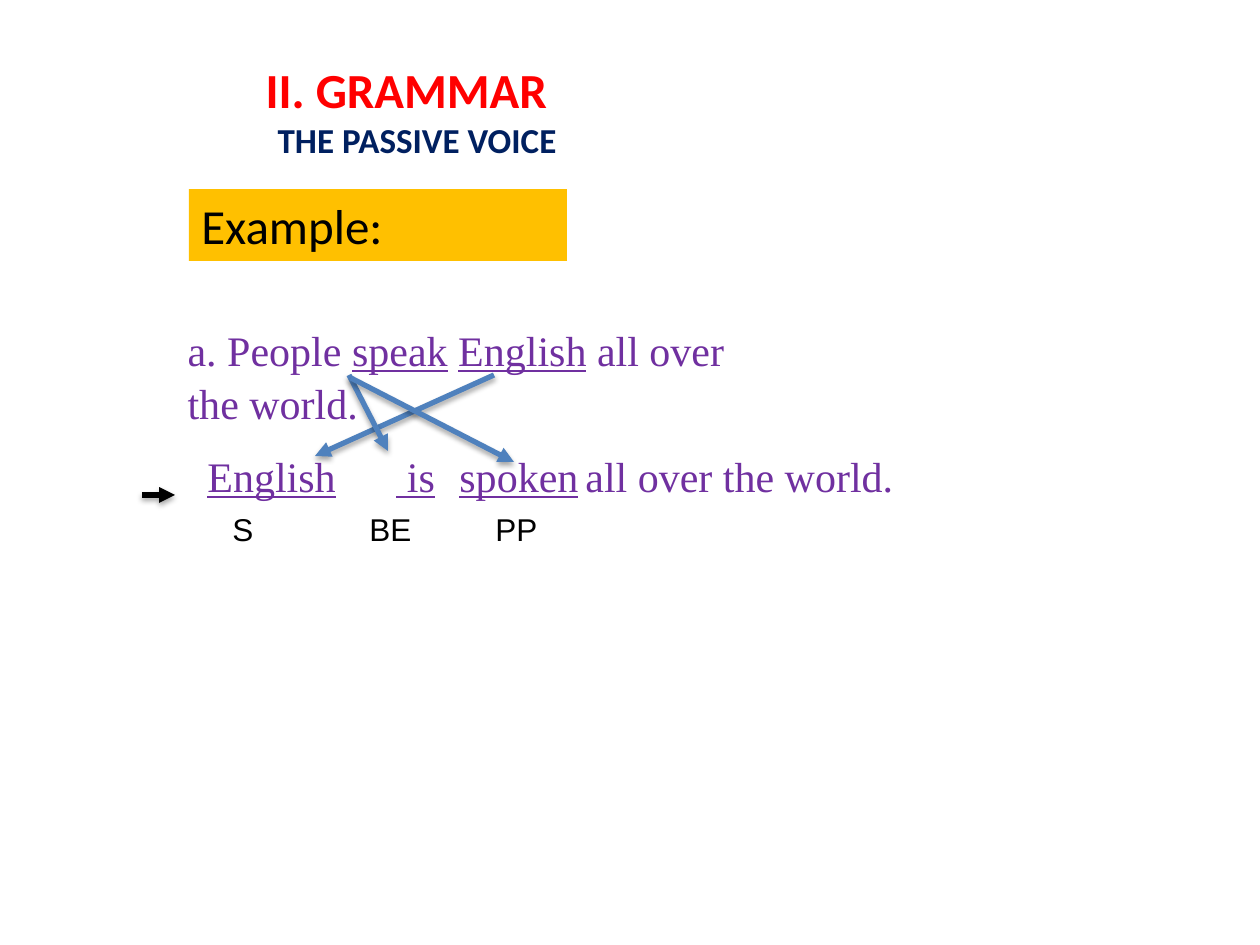
from typing import NamedTuple

from lxml.etree import SubElement
from pptx import Presentation
from pptx.dml.color import RGBColor
from pptx.enum.shapes import MSO_CONNECTOR as Connector, MSO_SHAPE as Shape
from pptx.enum.text import MSO_ANCHOR as Anchor, MSO_AUTO_SIZE as AutoSize, PP_ALIGN as Align
from pptx.oxml.ns import qn
from pptx.util import Emu, Pt

EMU_PER_PX = 914400 / 126
COLORS = {
    "heading": "FF0000",
    "topic": "002060",
    "sentence": "7030A0",
    "banner": "FFC000",
    "swap": "4F81BD",
    "black": "000000",
}


class Run(NamedTuple):
    text: str
    underline: bool = False


class Box(NamedTuple):
    left: int
    top: int
    width: int
    height: int


class Arrow(NamedTuple):
    start: tuple[int, int]
    end: tuple[int, int]
    color: str


class Label(NamedTuple):
    text: str
    box: Box


ACTIVE = [Run("a. People "), Run("speak", True), Run(" "), Run("English", True),
          Run(" all over the world.")]
PASSIVE = [Run("English", True), Run("\t"), Run(" is", True), Run("\t"),
           Run("spoken", True), Run("\tall over the world.")]
LABELS = [
    Label("S", Box(220, 504, 44, 50)),
    Label("BE", Box(357, 504, 69, 50)),
    Label("PP", Box(483, 504, 69, 50)),
]
ARROWS = [
    Arrow((494, 375), (315, 456), "swap"),
    Arrow((349, 375), (388, 451), "swap"),
    Arrow((351, 378), (514, 462), "swap"),
    Arrow((142, 495), (175, 495), "black"),
]


def px(length: int) -> Emu:
    return Emu(round(length * EMU_PER_PX))


def rgb(name: str) -> RGBColor:
    return RGBColor.from_string(COLORS[name])


def write(paragraph, runs: list[Run], *, font: str, size: int, color: str,
          bold: bool = False, indent: int = 0, spacing: float = 1.0,
          tabs: tuple[int, ...] = ()) -> None:
    paragraph.alignment = Align.LEFT
    paragraph.line_spacing = spacing
    paragraph.space_before = Pt(0)
    properties = paragraph._p.get_or_add_pPr()
    properties.set("marL", str(px(indent)))
    properties.set("indent", "0")
    SubElement(properties, qn("a:buNone"))
    if tabs:
        stops = SubElement(properties, qn("a:tabLst"))
        for stop in tabs:
            SubElement(stops, qn("a:tab"), pos=str(px(stop)), algn="l")
    for piece in runs:
        run = paragraph.add_run()
        run.text = piece.text
        run.font.name = font
        run.font.size = Pt(size)
        run.font.bold = bold
        run.font.underline = piece.underline
        run.font.color.rgb = rgb(color)


def place(shape, box: Box, anchor: Anchor = Anchor.TOP):
    shape.left, shape.top, shape.width, shape.height = map(px, box)
    frame = shape.text_frame
    frame.word_wrap = True
    frame.auto_size = AutoSize.NONE
    frame.vertical_anchor = anchor
    return frame


def add_text_area(slide, box: Box):
    return place(slide.shapes.add_textbox(*map(px, box)), box)


def add_arrow(slide, arrow: Arrow) -> None:
    connector = slide.shapes.add_connector(
        Connector.STRAIGHT, *map(px, arrow.start + arrow.end))
    connector.line.color.rgb = rgb(arrow.color)
    connector.line.width = Pt(3)
    SubElement(connector.line._get_or_add_ln(), qn("a:tailEnd"), type="triangle")
    effects = SubElement(connector._element.spPr, qn("a:effectLst"))
    shadow = SubElement(effects, qn("a:outerShdw"), blurRad=str(Pt(3.1)),
                        dist=str(Pt(1.8)), dir="5400000", rotWithShape="0")
    tint = SubElement(shadow, qn("a:srgbClr"), val=COLORS["black"])
    SubElement(tint, qn("a:alpha"), val="35000")


def main() -> None:
    deck = Presentation()
    deck.slide_width, deck.slide_height = px(1260), px(945)
    slide = deck.slides.add_slide(deck.slide_layouts[1])

    heading = place(slide.shapes.title, Box(242, 53, 557, 115))
    write(heading.paragraphs[0], [Run("II. GRAMMAR")], font="Calibri", size=28,
          color="heading", bold=True, indent=11)
    write(heading.add_paragraph(), [Run("THE PASSIVE VOICE")], font="Calibri", size=20,
          color="topic", bold=True, indent=23)

    active = place(slide.placeholders[1], Box(175, 315, 563, 115))
    write(active.paragraphs[0], ACTIVE, font="Times New Roman", size=24,
          color="sentence", spacing=1.06)

    banner_box = Box(189, 189, 378, 72)
    banner = slide.shapes.add_shape(Shape.RECTANGLE, *map(px, banner_box))
    banner.shadow.inherit = False
    banner.fill.solid()
    banner.fill.fore_color.rgb = rgb("banner")
    banner.line.fill.background()
    write(place(banner, banner_box, Anchor.MIDDLE).paragraphs[0], [Run("Example:")],
          font="Calibri", size=28, color="black")

    passive = add_text_area(slide, Box(195, 441, 813, 63))
    write(passive.paragraphs[0], PASSIVE, font="Times New Roman", size=24,
          color="sentence", spacing=1.06, tabs=(160, 250, 390))

    for label in LABELS:
        write(add_text_area(slide, label.box).paragraphs[0], [Run(label.text)],
              font="Arial", size=18, color="black")
    for arrow in ARROWS:
        add_arrow(slide, arrow)

    deck.save("out.pptx")


if __name__ == "__main__":
    main()
